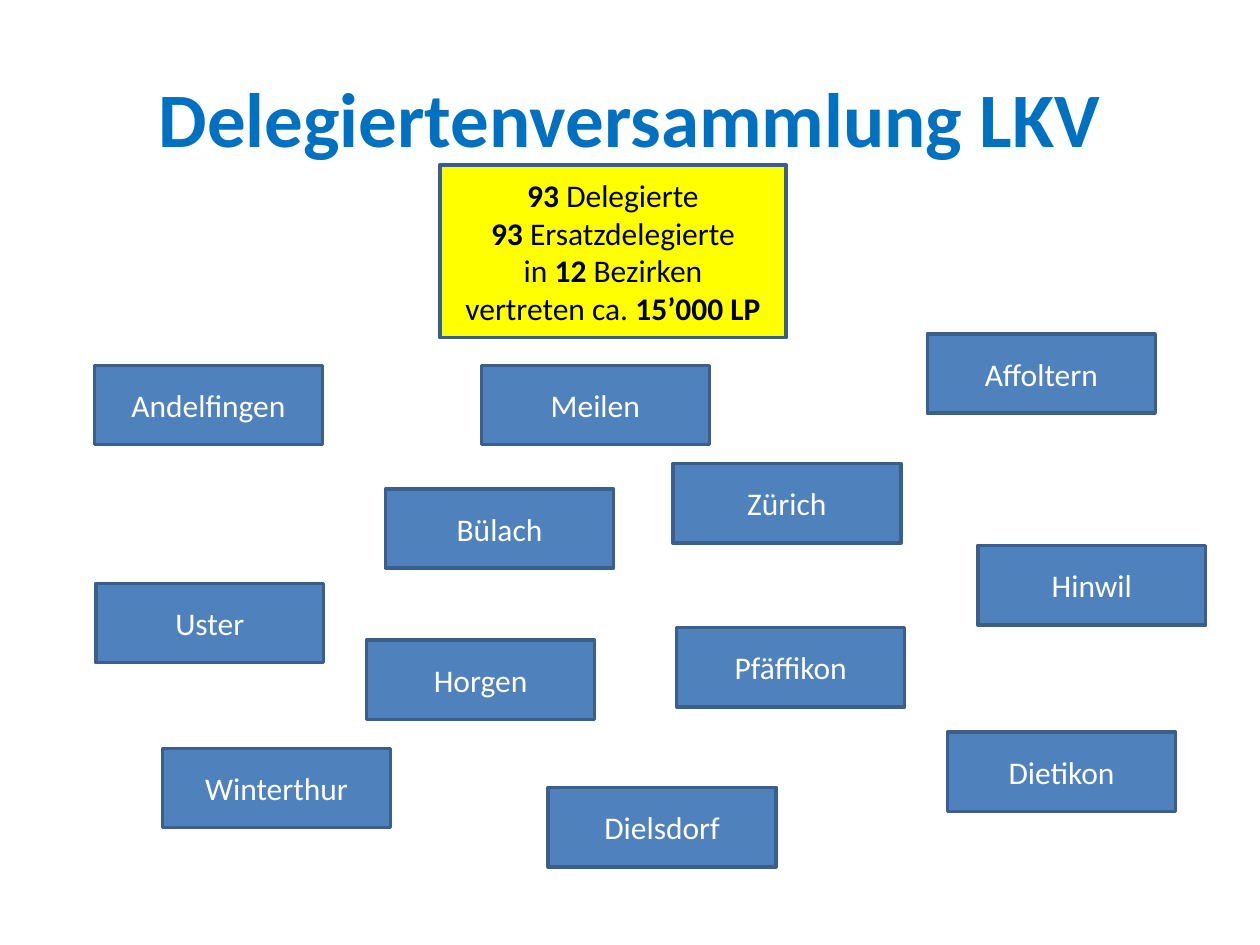
from pptx import Presentation
from pptx.dml.color import RGBColor
from pptx.enum.shapes import MSO_SHAPE
from pptx.enum.text import MSO_ANCHOR, PP_ALIGN
from pptx.util import Inches, Pt

TITLE = "Delegiertenversammlung LKV"
SUMMARY = [
    [("93 ", True), ("Delegierte", False)],
    [("93", True), (" Ersatzdelegierte", False)],
    [("in ", False), ("12", True), (" Bezirken", False)],
    [("vertreten ca. ", False), ("15’000 LP", True)],
]
DISTRICTS = [
    ("Andelfingen", 0.75, 2.9),
    ("Affoltern", 7.36, 2.65),
    ("Bülach", 3.06, 3.88),
    ("Horgen", 2.91, 5.08),
    ("Pfäffikon", 5.37, 4.98),
    ("Meilen", 3.82, 2.9),
    ("Hinwil", 7.76, 4.33),
    ("Uster", 0.76, 4.63),
    ("Dielsdorf", 4.35, 6.25),
    ("Dietikon", 7.52, 5.81),
    ("Winterthur", 1.29, 5.94),
    ("Zürich", 5.34, 3.68),
]
DISTRICT_SIZE = (1.81, 0.63)
COLORS = {
    "title": "0070C0",
    "summary": "FFFF00",
    "district": "4F81BD",
    "border": "3A5F8C",
    "dark": "000000",
    "light": "FFFFFF",
}


def rgb(name):
    return RGBColor.from_string(COLORS[name])


def write(tf, lines, size, color):
    tf.word_wrap = True
    tf.vertical_anchor = MSO_ANCHOR.MIDDLE
    for i, runs in enumerate(lines):
        p = tf.add_paragraph() if i else tf.paragraphs[0]
        p.alignment = PP_ALIGN.CENTER
        for text, bold in runs:
            r = p.add_run()
            r.text = text
            r.font.name = "Calibri"
            r.font.size = Pt(size)
            r.font.bold = bold
            r.font.color.rgb = rgb(color)


def add_box(s, x, y, w, h, fill, lines, color):
    box = s.shapes.add_shape(
        MSO_SHAPE.RECTANGLE, Inches(x), Inches(y), Inches(w), Inches(h))
    box.shadow.inherit = False
    box.fill.solid()
    box.fill.fore_color.rgb = rgb(fill)
    box.line.color.rgb = rgb("border")
    box.line.width = Pt(2)
    write(box.text_frame, lines, 18, color)


def main():
    prs = Presentation()
    prs.slide_width, prs.slide_height = Inches(10), Inches(7.5)
    s = prs.slides.add_slide(prs.slide_layouts[5])

    title = s.shapes.title
    title.left, title.top = Inches(0.5), Inches(0.3)
    title.width, title.height = Inches(9), Inches(1.25)
    write(title.text_frame, [[(TITLE, True)]], 44, "title")

    add_box(s, 3.49, 1.31, 2.75, 1.37, "summary", SUMMARY, "dark")
    for name, x, y in DISTRICTS:
        add_box(s, x, y, *DISTRICT_SIZE, "district", [[(name, False)]], "light")

    prs.save("out.pptx")


if __name__ == "__main__":
    main()
